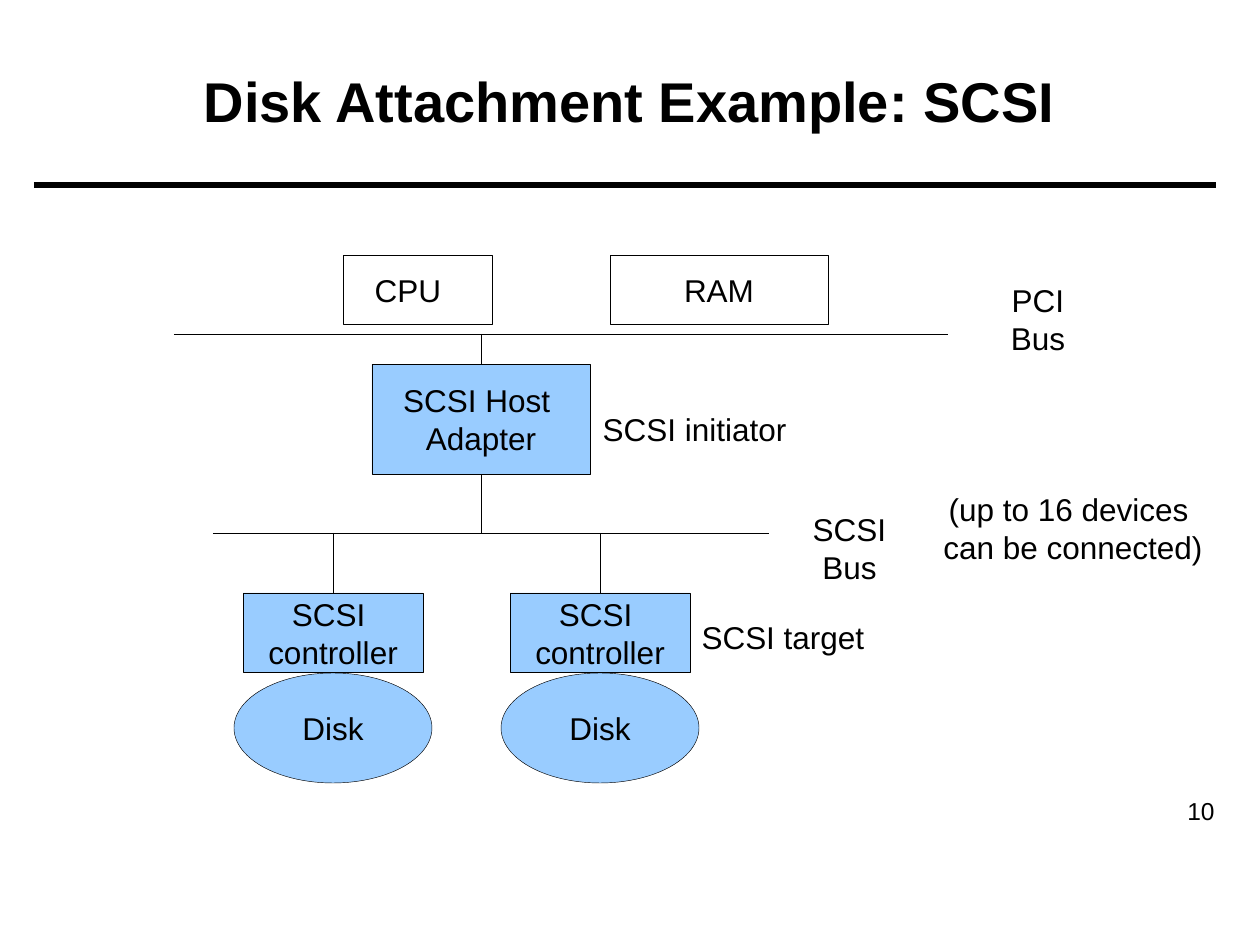
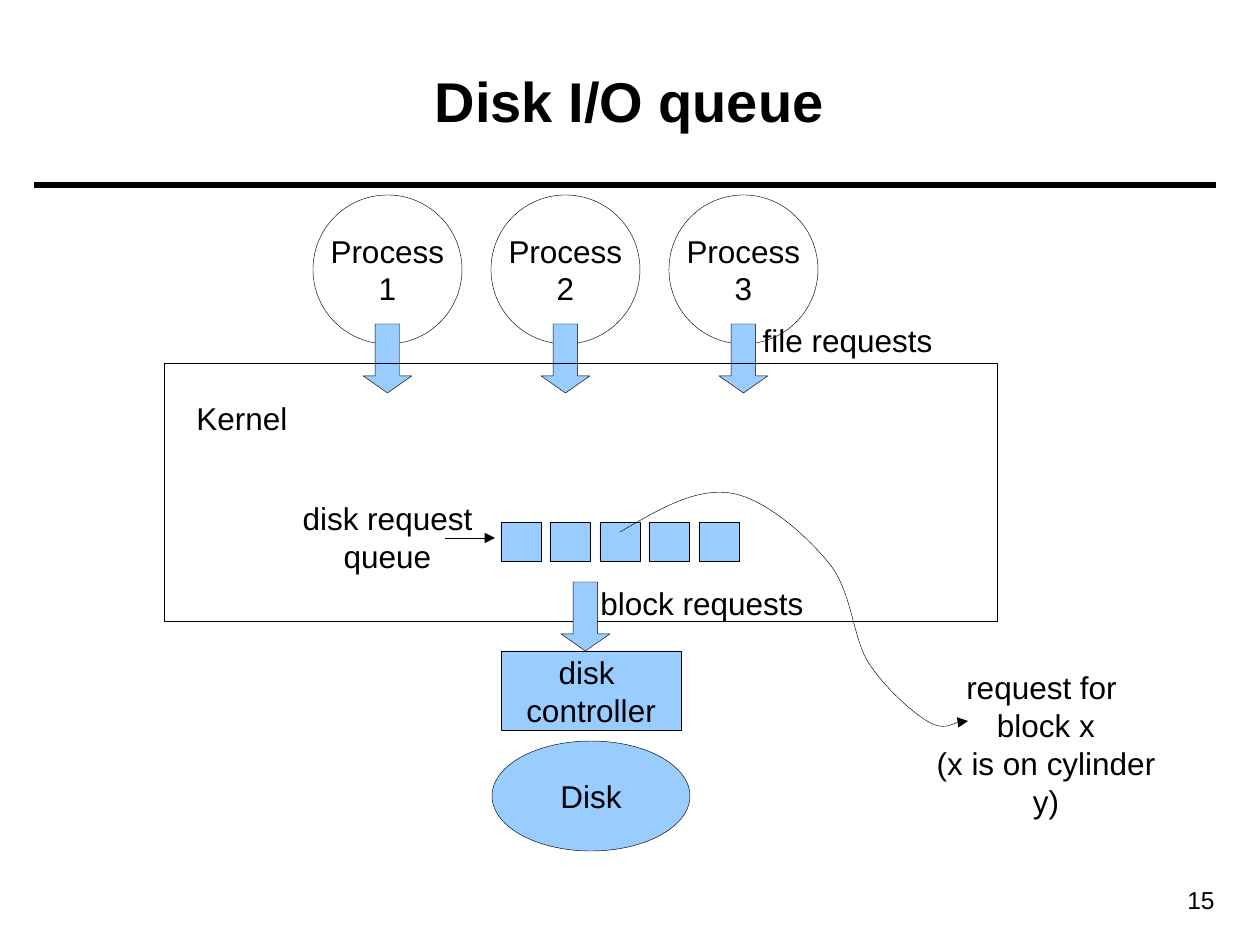
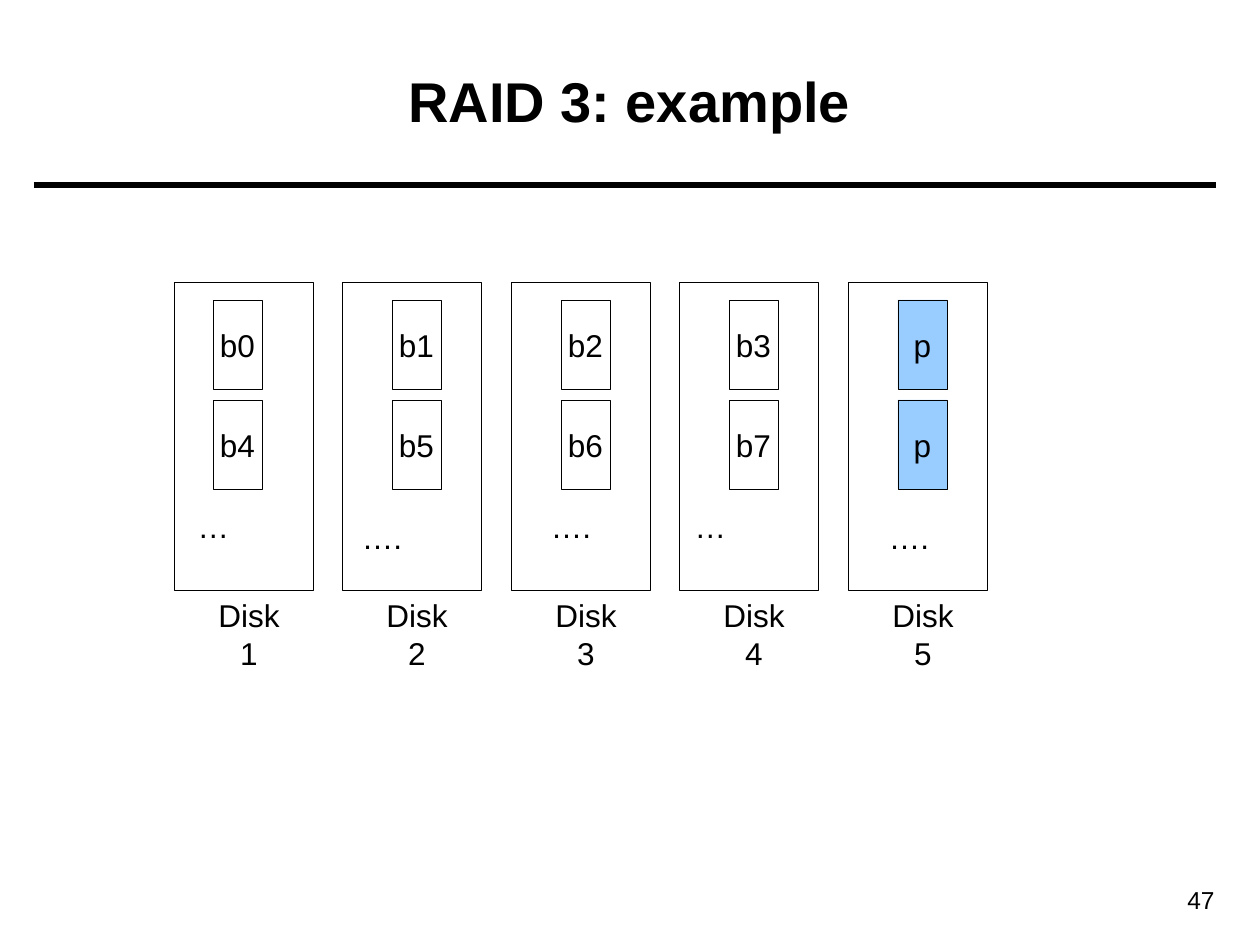
from lxml import etree
from pptx import Presentation, util as u
from pptx.dml.color import RGBColor
from pptx.enum import shapes, text
from pptx.oxml.ns import qn

PX = 914400 / 126
BLACK = RGBColor(0x00, 0x00, 0x00)
SKY = RGBColor(0x99, 0xCC, 0xFF)
FONT = "Arial"
HAIRLINE = 0.25

RECT = shapes.MSO_SHAPE.RECTANGLE
OVAL = shapes.MSO_SHAPE.OVAL
DOWN_ARROW = shapes.MSO_SHAPE.DOWN_ARROW
CENTER, RIGHT = text.PP_ALIGN.CENTER, text.PP_ALIGN.RIGHT
TOP, MIDDLE = text.MSO_ANCHOR.TOP, text.MSO_ANCHOR.MIDDLE

LABEL_H = 50
CONTROLLER_W, CONTROLLER_H = 180, 79
DISK_W, DISK_H = 198, 110
DISK_INDENT = (CONTROLLER_W - DISK_W) // 2
ARROW_W, ARROW_H = 49, 69


def px(*lengths):
    return [u.Emu(round(length * PX)) for length in lengths]


def set_all(target, values):
    for name, value in values.items():
        setattr(target, name, value)


def write(shape, words, size=18, bold=False, align=CENTER, anchor=MIDDLE, wrap=False):
    """Fill a shape with text; newlines part paragraphs, vertical tabs break lines."""
    frame = shape.text_frame
    frame.text = words
    set_all(frame, {"word_wrap": wrap, "vertical_anchor": anchor})
    for paragraph in frame.paragraphs:
        paragraph.alignment = align
        for run in paragraph.runs:
            set_all(run.font, {"name": FONT, "size": u.Pt(size), "bold": bold})
            run.font.color.rgb = BLACK


def outline(shape, fill=None):
    shape.shadow.inherit = False
    if fill is None:
        shape.fill.background()
    else:
        shape.fill.solid()
        shape.fill.fore_color.rgb = fill
    shape.line.color.rgb = BLACK
    shape.line.width = u.Pt(HAIRLINE)


def block(slide, kind, left, top, width, height, words="", fill=None):
    shape = slide.shapes.add_shape(kind, *px(left, top, width, height))
    outline(shape, fill)
    if words:
        write(shape, words)
    return shape


def text_box(slide, left, top, width, height, words, **style):
    box = slide.shapes.add_textbox(*px(left, top, width, height))
    write(box, words, **style)
    return box


def label(slide, left, top, width, words, height=LABEL_H):
    box = text_box(slide, left, top, width, height, words, anchor=TOP)
    box.text_frame.auto_size = text.MSO_AUTO_SIZE.SHAPE_TO_FIT_TEXT


def line(slide, x1, y1, x2, y2, weight=HAIRLINE):
    connector = slide.shapes.add_connector(
        shapes.MSO_CONNECTOR.STRAIGHT, *px(x1, y1, x2, y2))
    connector.line.color.rgb = BLACK
    connector.line.width = u.Pt(weight)
    etree.SubElement(connector._element.spPr, qn("a:effectLst"))
    return connector


def point_arrow(shape):
    etree.SubElement(shape.line._get_or_add_ln(), qn("a:tailEnd"), type="triangle")


def curve(slide, points):
    """Draw a Bézier path: a start, then two controls and an end per segment."""
    builder = slide.shapes.build_freeform(*points[0], scale=PX)
    builder.add_line_segments(points[1:], close=False)
    shape = builder.convert_to_shape()
    outline(shape)
    segments = list(shape._element.iter(qn("a:lnTo")))
    outline_path = segments[0].getparent()
    for start in range(0, len(segments), 3):
        bezier = etree.SubElement(outline_path, qn("a:cubicBezTo"))
        for segment in segments[start:start + 3]:
            bezier.append(segment[0])
            outline_path.remove(segment)
    return shape


def base_slide(deck, title, number, number_top=879):
    slide = deck.slides.add_slide(deck.slide_layouts[6])
    line(slide, 34, 185, 1216, 185, weight=3)
    text_box(slide, 1096, number_top, 131, 43, number,
             size=14, align=RIGHT, anchor=TOP, wrap=True)
    text_box(slide, 44, 21, 1171, 158, title, size=32, bold=True, wrap=True)
    return slide


def controller_and_disk(slide, left, top, words, gap):
    controller = block(slide, RECT, left, top, CONTROLLER_W, CONTROLLER_H, words, SKY)
    block(slide, OVAL, left + DISK_INDENT, top + CONTROLLER_H + gap,
          DISK_W, DISK_H, "Disk", SKY)
    return controller


def pci_region(slide, left, top):
    bus_y = top + 79
    block(slide, RECT, left + 169, top, 149, 69)
    label(slide, left + 188, top + 10, 92, "CPU")
    block(slide, RECT, left + 436, top, 218, 69, "RAM")
    line(slide, left, bus_y, left + 774, bus_y)
    label(slide, left + 794, top + 20, 140, "PCI Bus")
    return bus_y


def host_adapter(slide, left, top, pci_y, scsi_y):
    width, height = 218, 110
    middle = left + width // 2
    adapter = block(slide, RECT, left, top, width, height, "SCSI Host \nAdapter", SKY)
    line(slide, middle, pci_y, middle, top).end_connect(adapter, 0)
    line(slide, middle, top + height, middle, scsi_y).begin_connect(adapter, 2)
    label(slide, left + width, top + 40, 209, "SCSI initiator")


def scsi_region(slide, left, bus_y):
    line(slide, left, bus_y, left + 556, bus_y)
    label(slide, left + 556, bus_y - 29, 161, "SCSI Bus")
    label(slide, left + 718, bus_y - 49, 284, "(up to 16 devices \ncan be connected)", 88)
    top = bus_y + 60
    for target_left in (left + 30, left + 297):
        middle = target_left + CONTROLLER_W // 2
        controller = controller_and_disk(slide, target_left, top, "SCSI \ncontroller", 1)
        line(slide, middle, bus_y, middle, top).end_connect(controller, 0)
    label(slide, left + 476, top + 19, 188, "SCSI target")


def scsi_slide(deck):
    slide = base_slide(deck, "Disk Attachment Example: SCSI", "10", number_top=790)
    scsi_y = 533
    pci_y = pci_region(slide, 174, 255)
    host_adapter(slide, 372, 364, pci_y, scsi_y)
    scsi_region(slide, 213, scsi_y)


def request_arrow(slide, left, top):
    arrow = block(slide, DOWN_ARROW, left, top, ARROW_W, ARROW_H, fill=SKY)
    arrow.adjustments[1] = 0.35


def processes(slide, left, top):
    size, step = 149, 178
    for index in range(3):
        process_left = left + index * step
        block(slide, OVAL, process_left, top, size, size, f"Process\n{index + 1}")
        request_arrow(slide, process_left + (size - ARROW_W) // 2, top + 129)
    label(slide, left + 437, top + 120, 195, "file requests")


def kernel(slide, left, top):
    block(slide, RECT, left, top, 833, 258)
    label(slide, left + 20, top + 30, 116, "Kernel")
    request_arrow(slide, left + 397, top + 219)
    label(slide, left + 424, top + 215, 228, "block requests")
    request_queue(slide, left + 337, top + 159)


def request_queue(slide, left, top):
    for index in range(5):
        block(slide, RECT, left + index * 99 // 2, top, 40, 39, fill=SKY)
    point_arrow(line(slide, left - 56, top + 16, left - 6, top + 16))
    label(slide, left - 215, top - 29, 203, "disk request \nqueue", 88)


def block_request_note(slide, left, top):
    point_arrow(curve(slide, [
        (left + x, top + y) for x, y in (
            (0, 0),
            (38, -22), (74, -44), (110, -39),
            (144, -34), (185, 2), (208, 30),
            (232, 58), (232, 103), (248, 130),
            (265, 156), (291, 179), (307, 189),
            (324, 199), (341, 187), (348, 189))]))
    label(slide, left + 287, top + 130, 278,
          "request for \vblock x\v(x is on cylinder y)", 126)


def queue_slide(deck):
    slide = base_slide(deck, "Disk I/O queue", "15")
    processes(slide, 313, 195)
    kernel(slide, 164, 363)
    controller_and_disk(slide, 501, 651, "disk \ncontroller", 11)
    block_request_note(slide, 620, 532)


def raid_disk(slide, left, top, name, stripes, indent, fill, dots, dots_at):
    block(slide, RECT, left, top, 139, 308)
    label(slide, left + 19, top + 308, 112, name)
    for row, stripe in enumerate(stripes):
        block(slide, RECT, left + indent, top + 18 + row * 100, 49, 89, stripe, fill)
    dots_x, dots_y = dots_at
    label(slide, left + dots_x, top + dots_y, 57 if dots == "…" else 66, dots)


def raid_slide(deck):
    slide = base_slide(deck, "RAID 3: example", "47")
    disks = [
        (("b0", "b4"), 39, None, "…", (11, 219)),
        (("b1", "b5"), 50, None, "….", (7, 230)),
        (("b2", "b6"), 50, None, "….", (27, 219)),
        (("b3", "b7"), 50, None, "…", (3, 219)),
        (("p", "p"), 50, SKY, "….", (28, 230)),
    ]
    for index, disk in enumerate(disks):
        raid_disk(slide, 174 + index * 337 // 2, 282, f"Disk {index + 1}", *disk)


def main():
    deck = Presentation()
    deck.slide_width, deck.slide_height = px(1260, 945)
    for build in (scsi_slide, queue_slide, raid_slide):
        build(deck)
    deck.save("out.pptx")


if __name__ == "__main__":
    main()
